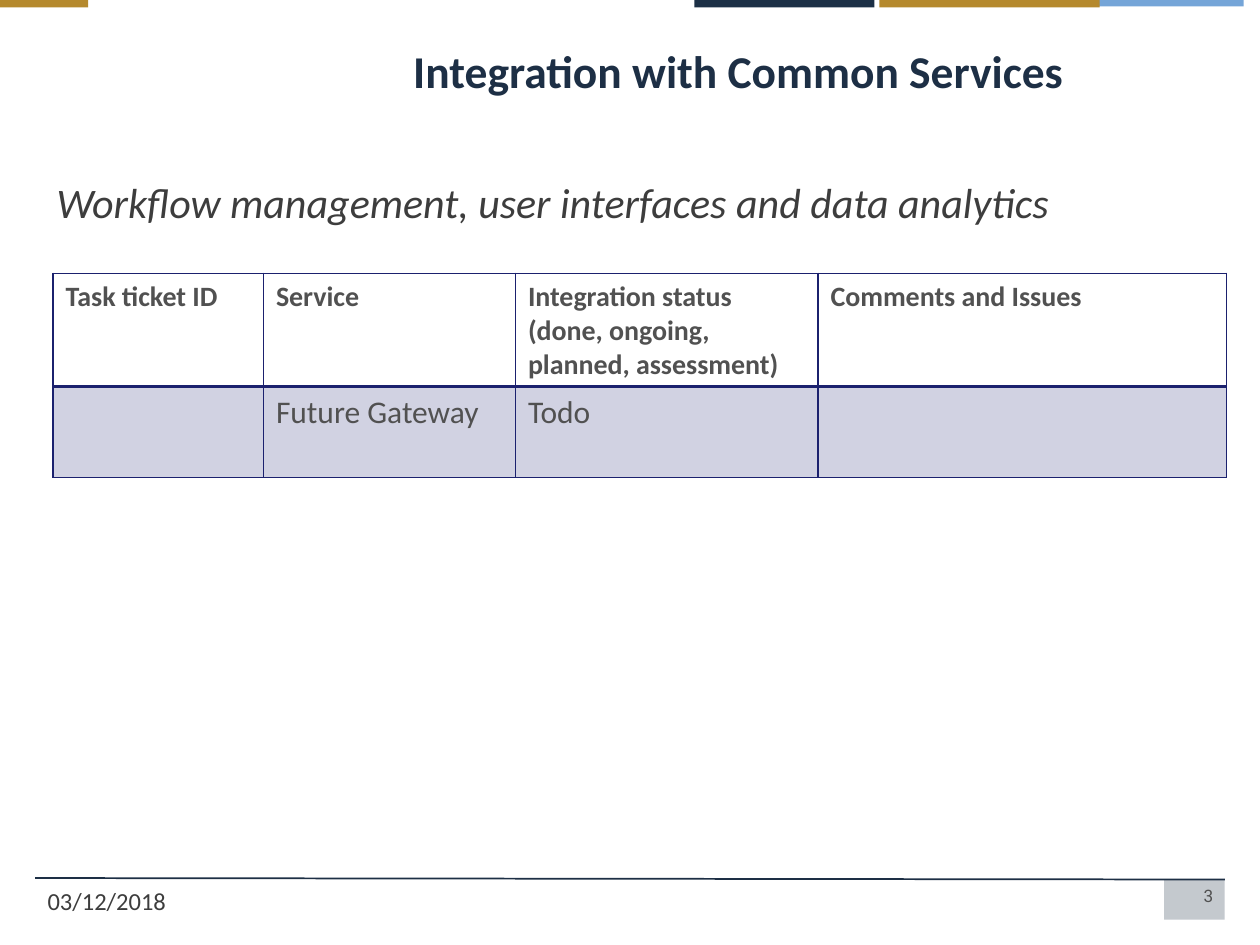
from pptx import Presentation
from pptx.dml.color import RGBColor
from pptx.enum.shapes import MSO_CONNECTOR, MSO_SHAPE
from pptx.enum.text import MSO_ANCHOR, PP_ALIGN
from pptx.oxml.ns import qn
from pptx.util import Cm, Pt
from lxml.etree import SubElement

NAVY = RGBColor(0x1D, 0x2F, 0x45)
DARK_NAVY = RGBColor(0x1C, 0x30, 0x46)
BLUE = RGBColor(0x75, 0xA5, 0xD8)
GOLD = RGBColor(0xB5, 0x89, 0x2D)
INDIGO = RGBColor(0x1B, 0x21, 0x6E)
GREY = RGBColor(0x51, 0x51, 0x51)
CHARCOAL = RGBColor(0x3D, 0x3D, 0x3D)


def set_fill(fill, color, opacity=100):
    fill.solid()
    fill.fore_color.rgb = color
    if opacity < 100:
        clr = fill._xPr.find(qn("a:solidFill"))[0]
        SubElement(clr, qn("a:alpha"), val=str(opacity * 1000))


def set_font(p, size, color, name="Calibri", bold=False, italic=False):
    f = p.font
    f.name, f.size, f.bold, f.italic = name, Pt(size), bold, italic
    f.color.rgb = color


def add_bar(slide, left, top, width, height, color, opacity=100):
    sp = slide.shapes.add_shape(MSO_SHAPE.RECTANGLE, Cm(left), Cm(top), Cm(width), Cm(height))
    sp.shadow.inherit = False
    set_fill(sp.fill, color, opacity)
    sp.line.fill.background()


def add_text(slide, box, text, size, color, anchor=MSO_ANCHOR.TOP, align=PP_ALIGN.LEFT, **style):
    tf = slide.shapes.add_textbox(*(Cm(v) for v in box)).text_frame
    tf.word_wrap = True
    tf.vertical_anchor = anchor
    p = tf.paragraphs[0]
    p.text = text
    p.alignment = align
    set_font(p, size, color, **style)


def add_top_bars(slide, left, top):
    for x, width, height, color in (
        (14, 3.63, 0.15, DARK_NAVY),
        (21.9, 3.17, 0.13, BLUE),
        (17.73, 4.44, 0.15, GOLD),
        (0, 1.78, 0.15, GOLD),
    ):
        add_bar(slide, left + x, top, width, height, color)


def add_footer(slide, left, top, width, date, number):
    right = left + width
    rule = slide.shapes.add_connector(
        MSO_CONNECTOR.STRAIGHT, Cm(right), Cm(top), Cm(left), Cm(top - 0.03))
    SubElement(rule._element.spPr, qn("a:effectLst"))
    rule.line.color.rgb = NAVY
    rule.line.width = Pt(1)
    add_bar(slide, right - 1.22, top, 1.22, 0.81, NAVY, opacity=26)
    add_text(slide, (right - 6.48, top, 6.5, 0.79), number, 9.8, GREY,
             align=PP_ALIGN.RIGHT, name="Roboto")
    add_text(slide, (left, top, 5.92, 0.79), date, 14, CHARCOAL)


def set_borders(cell, bottom):
    tcPr = cell._tc.get_or_add_tcPr()
    for side, width in (("L", 1), ("R", 1), ("T", 1), ("B", bottom)):
        ln = SubElement(tcPr, qn(f"a:ln{side}"), w=str(Pt(width)))
        SubElement(SubElement(ln, qn("a:solidFill")), qn("a:srgbClr"), val=str(INDIGO))


def add_service_table(slide, left, top, col_widths, row_heights, rows):
    table = slide.shapes.add_table(
        len(rows), len(col_widths), Cm(left), Cm(top),
        Cm(sum(col_widths)), Cm(sum(row_heights))).table
    for col, width in zip(table.columns, col_widths):
        col.width = Cm(width)
    for i, (texts, height) in enumerate(zip(rows, row_heights)):
        header = i == 0
        table.rows[i].height = Cm(height)
        for cell, text in zip(table.rows[i].cells, texts):
            cell.text = text
            set_font(cell.text_frame.paragraphs[0], 16 if header else 18, GREY, bold=header)
            set_borders(cell, bottom=2 if header else 1)
            if header:
                cell.fill.background()
            else:
                set_fill(cell.fill, INDIGO, opacity=20)


def main():
    prs = Presentation()
    prs.slide_width, prs.slide_height = Cm(25.4), Cm(19.05)
    slide = prs.slides.add_slide(prs.slide_layouts[6])
    add_top_bars(slide, 0, 0)
    add_footer(slide, 0.71, 17.73, 23.98, "03/12/2018", "3")
    add_text(slide, (8.08, 0.71, 16.61, 1.4), "Integration with Common Services",
             26, NAVY, anchor=MSO_ANCHOR.MIDDLE, bold=True)
    add_service_table(slide, 1.07, 5.51, (4.24, 5.08, 6.1, 8.23), (2.03, 1.83), (
        ("Task ticket ID", "Service",
         "Integration status (done, ongoing, planned, assessment)", "Comments and Issues"),
        ("", "Future Gateway", "Todo", ""),
    ))
    add_text(slide, (0.89, 3.43, 24, 2.08),
             "Workflow management, user interfaces and data analytics",
             24, CHARCOAL, italic=True)
    prs.save("out.pptx")


if __name__ == "__main__":
    main()
